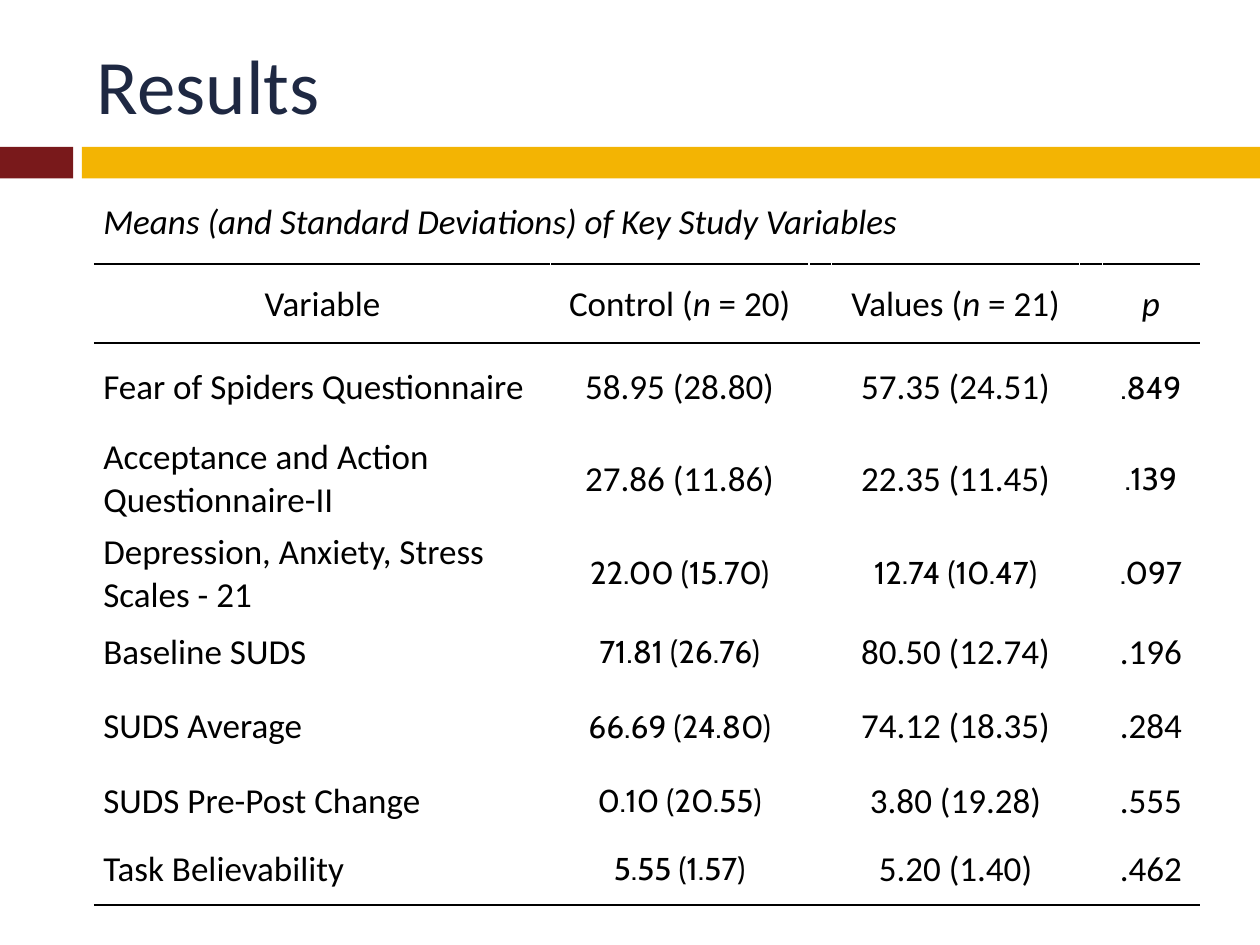
from dataclasses import dataclass

from lxml import etree
from pptx import Presentation
from pptx.dml.color import RGBColor
from pptx.enum.shapes import MSO_SHAPE
from pptx.enum.text import MSO_ANCHOR, PP_ALIGN
from pptx.oxml.ns import qn
from pptx.util import Inches, Pt

RECT = MSO_SHAPE.RECTANGLE
TOP, MIDDLE = MSO_ANCHOR.TOP, MSO_ANCHOR.MIDDLE
LEFT, CENTER = PP_ALIGN.LEFT, PP_ALIGN.CENTER
WIDTH, HEIGHT = Inches(10), Inches(7.5)
COL, ROW = WIDTH / 100, HEIGHT / 90


@dataclass(frozen=True)
class Theme:
    maroon: str = "79191B"
    gold: str = "F3B403"
    navy: str = "1E2842"
    black: str = "000000"
    font: str = "Calibri"
    alt_font: str = "Cabin"
    title: int = 44
    body: int = 20
    alt: int = 18
    rule: int = 1


THEME = Theme()
CAPTION = "Means (and Standard Deviations) of Key Study Variables"
COL_WIDTHS = [3.62, 2.05, 0.18, 1.97, 0.18, 0.77]
ROW_HEIGHTS = [0.51, 0.63, 0.7, 0.75, 0.75, 0.5, 0.68, 0.5, 0.58]
TEXT_COLS = [0, 1, 3, 5]
HEADER = [
    [("Variable", False)],
    [("Control (", False), ("n", True), (" = 20)", False)],
    [("Values (", False), ("n", True), (" = 21)", False)],
    [("p", True)],
]
RESULTS = [
    ("Fear of Spiders Questionnaire", "58.95 (28.80)", "57.35 (24.51)", ".849"),
    ("Acceptance and Action Questionnaire-II", "27.86 (11.86)", "22.35 (11.45)", ".139"),
    ("Depression, Anxiety, Stress Scales - 21", "22.00 (15.70)", "12.74 (10.47)", ".097"),
    ("Baseline SUDS", "71.81 (26.76)", "80.50 (12.74)", ".196"),
    ("SUDS Average", "66.69 (24.80)", "74.12 (18.35)", ".284"),
    ("SUDS Pre-Post Change", "0.10 (20.55)", "3.80 (19.28)", ".555"),
    ("Task Believability", "5.55 (1.57)", "5.20 (1.40)", ".462"),
]
ALT_FONT_VALUES = {
    ".849", ".139", ".097", "22.00 (15.70)", "12.74 (10.47)",
    "71.81 (26.76)", "66.69 (24.80)", "0.10 (20.55)", "5.55 (1.57)",
}


def grid(x, y, w, h):
    return [round(v) for v in (x * COL, y * ROW, w * COL, h * ROW)]


def write(tf, runs, *, size=THEME.body, font=THEME.font, color=THEME.black, align=LEFT):
    p = tf.paragraphs[0]
    p.alignment = align
    for text, italic in runs:
        r = p.add_run()
        r.text = text
        r.font.size = Pt(size)
        r.font.name = font
        r.font.italic = italic
        r.font.color.rgb = RGBColor.from_string(color)


def add_bar(s, box, color):
    sp = s.shapes.add_shape(RECT, *box)
    sp.shadow.inherit = False
    sp.fill.solid()
    sp.fill.fore_color.rgb = RGBColor.from_string(color)
    sp.line.fill.background()


def add_title(s, box, text):
    tf = s.shapes.add_textbox(*box).text_frame
    tf.word_wrap = True
    tf.vertical_anchor = MIDDLE
    write(tf, [(text, False)], size=THEME.title, color=THEME.navy)


def set_border(cell, side):
    tc_pr = cell._tc.get_or_add_tcPr()
    ln = etree.Element(qn(f"a:ln{side}"), w=str(Pt(THEME.rule)))
    fill = etree.SubElement(ln, qn("a:solidFill"))
    etree.SubElement(fill, qn("a:srgbClr"), val=THEME.black)
    tc_pr.insert(0, ln)


def style_cell(cell, row):
    cell.fill.background()
    cell.margin_left = cell.margin_right = Inches(0.07)
    cell.margin_top, cell.margin_bottom = Inches(0.01), 0
    cell.vertical_anchor = MIDDLE if row else TOP
    if row in (0, 1, len(ROW_HEIGHTS) - 1):
        set_border(cell, "B")
    if row in (1, 2):
        set_border(cell, "T")


def add_results_table(s, box):
    table = s.shapes.add_table(len(ROW_HEIGHTS), len(COL_WIDTHS), *box).table
    table.first_row = table.horz_banding = False
    for col, width in zip(table.columns, COL_WIDTHS):
        col.width = Inches(width)
    for i, height in enumerate(ROW_HEIGHTS):
        table.rows[i].height = Inches(height)
        for cell in table.rows[i].cells:
            style_cell(cell, i)
    table.cell(0, 0).merge(table.cell(0, len(COL_WIDTHS) - 1))
    write(table.cell(0, 0).text_frame, [(CAPTION, True)])
    for j, runs in zip(TEXT_COLS, HEADER):
        write(table.cell(1, j).text_frame, runs, align=CENTER)
    for i, values in enumerate(RESULTS, 2):
        for j, text in zip(TEXT_COLS, values):
            alt = text in ALT_FONT_VALUES
            write(table.cell(i, j).text_frame, [(text, False)],
                  size=THEME.alt if alt else THEME.body,
                  font=THEME.alt_font if alt else THEME.font,
                  align=CENTER if j else LEFT)


def main():
    prs = Presentation()
    prs.slide_width, prs.slide_height = WIDTH, HEIGHT
    s = prs.slides.add_slide(prs.slide_layouts[6])
    add_bar(s, grid(0, 14, 5.8, 3), THEME.maroon)
    add_bar(s, grid(6.5, 14, 93.5, 3), THEME.gold)
    add_title(s, grid(6.7, 3, 89.2, 10), "Results")
    add_results_table(s, grid(7.5, 19, 87.7, 67.2))
    prs.save("out.pptx")


if __name__ == "__main__":
    main()
